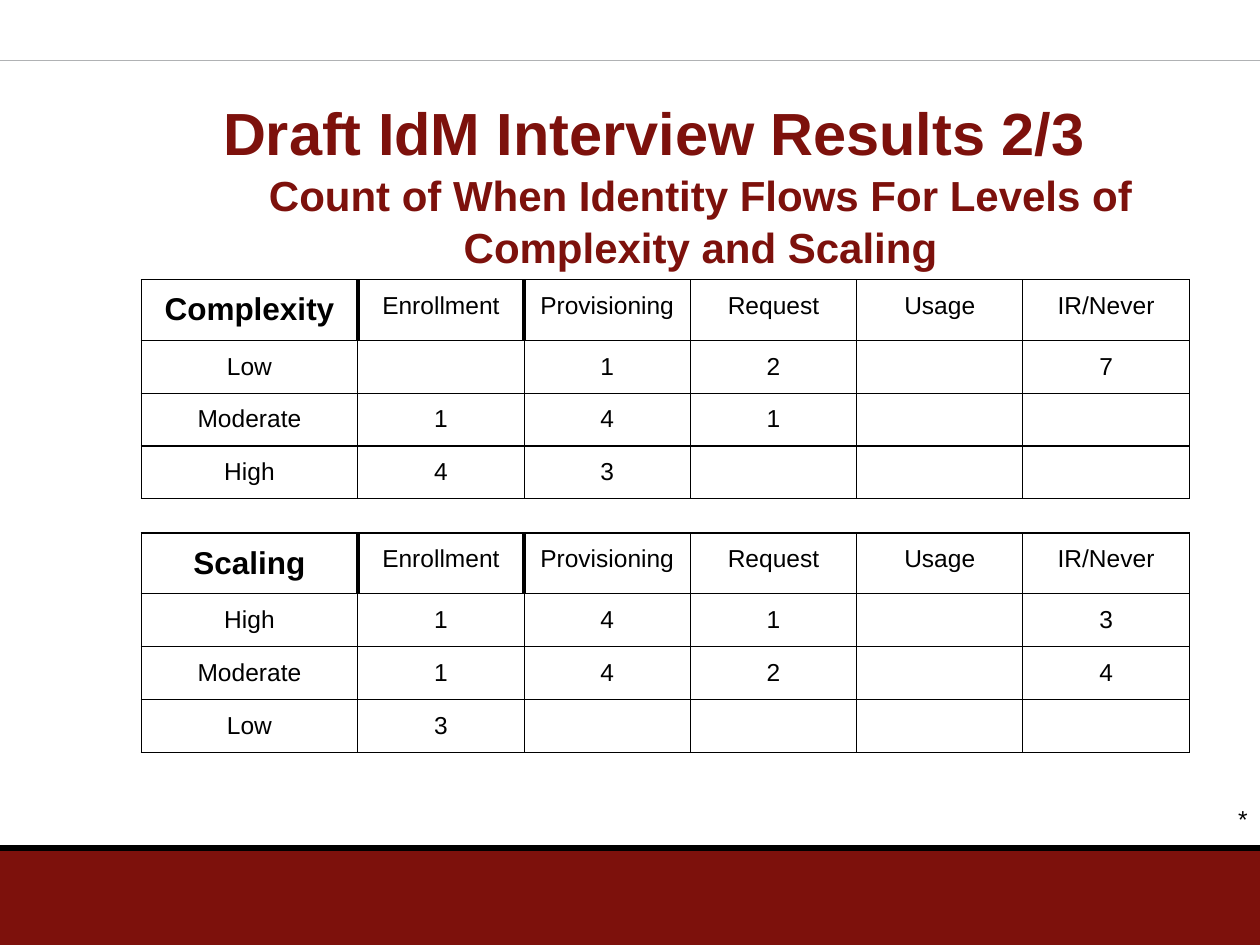
from dataclasses import dataclass

from lxml import etree
from pptx import Presentation
from pptx.dml.color import RGBColor
from pptx.enum.shapes import MSO_CONNECTOR, MSO_SHAPE
from pptx.enum.text import MSO_ANCHOR, MSO_AUTO_SIZE, PP_ALIGN
from pptx.oxml.ns import qn
from pptx.util import Inches, Pt

STRAIGHT = MSO_CONNECTOR.STRAIGHT
RECTANGLE = MSO_SHAPE.RECTANGLE
TOP = MSO_ANCHOR.TOP
NO_AUTOFIT = MSO_AUTO_SIZE.NONE
LEFT, CENTER, RIGHT = PP_ALIGN.LEFT, PP_ALIGN.CENTER, PP_ALIGN.RIGHT


@dataclass(frozen=True)
class Theme:
    font: str = "Arial"
    maroon: str = "7D110C"
    grey: str = "B0B2B4"
    black: str = "000000"
    white: str = "FFFFFF"
    title_size: float = 34
    subtitle_size: float = 24
    corner_size: float = 18
    body_size: float = 14
    thin: float = 0.75
    thick: float = 2.25
    band_rule: float = 3.75


THEME = Theme()
SLIDE_WIDTH, SLIDE_HEIGHT = 10, 7.5
TITLE_ONLY_LAYOUT = 5

# Table geometry
TABLE_LEFT = 1.12
COLUMN_WIDTHS = [1.72] + [1.32] * 5
ROW_HEIGHTS = [0.48] + [0.42] * 3
CELL_MARGIN = 0.1
THICK_HEADER_EDGES = (1, 2)

# Table content
FLOWS = ["Enrollment", "Provisioning", "Request", "Usage", "IR/Never"]
COMPLEXITY = [
    ["Complexity"] + FLOWS,
    ["Low", "", "1", "2", "", "7"],
    ["Moderate", "1", "4", "1", "", ""],
    ["High", "4", "3", "", "", ""],
]
SCALING = [
    ["Scaling"] + FLOWS,
    ["High", "1", "4", "1", "", "3"],
    ["Moderate", "1", "4", "2", "", "4"],
    ["Low", "3", "", "", "", ""],
]


def write_paragraph(paragraph, text, size, color, align, bold=False):
    paragraph.text = text
    paragraph.alignment = align
    font = paragraph.font
    font.name, font.size, font.bold = THEME.font, Pt(size), bold
    font.color.rgb = RGBColor.from_string(color)


def add_rule(slide, y, color, width):
    rule = slide.shapes.add_connector(
        STRAIGHT, 0, Inches(y), Inches(SLIDE_WIDTH), Inches(y))
    rule.line.color.rgb = RGBColor.from_string(color)
    rule.line.width = Pt(width)
    etree.SubElement(rule._element.spPr, qn("a:effectLst"))


def add_band(slide, top, height):
    band = slide.shapes.add_shape(
        RECTANGLE, 0, Inches(top), Inches(SLIDE_WIDTH), Inches(height))
    band.shadow.inherit = False
    band.fill.solid()
    band.fill.fore_color.rgb = RGBColor.from_string(THEME.maroon)
    band.line.fill.background()


def add_footer_mark(slide):
    mark = slide.shapes.add_textbox(
        Inches(9.43), Inches(6.33), Inches(0.57), Inches(0.34))
    mark.text_frame.word_wrap = True
    write_paragraph(mark.text_frame.paragraphs[0], "*",
                    THEME.body_size, THEME.black, RIGHT)


def fill_title(slide):
    title = slide.shapes.title
    title.left, title.top = Inches(1.67), Inches(0.61)
    title.width, title.height = Inches(7.78), Inches(1.52)
    frame = title.text_frame
    frame.word_wrap = True
    frame.auto_size = NO_AUTOFIT
    frame.vertical_anchor = TOP
    frame.margin_left = frame.margin_right = Inches(0.1)
    frame.margin_top, frame.margin_bottom = Inches(0.13), Inches(0)
    heading, subtitle = frame.paragraphs[0], frame.add_paragraph()
    write_paragraph(heading, "Draft IdM Interview Results 2/3",
                    THEME.title_size, THEME.maroon, LEFT, bold=True)
    write_paragraph(
        subtitle,
        "Count of When Identity Flows For Levels of Complexity and Scaling",
        THEME.subtitle_size, THEME.maroon, CENTER, bold=True)
    for paragraph in (heading, subtitle):
        paragraph.line_spacing = 1.04
        paragraph.space_before = Pt(0)


def set_borders(cell, row, column):
    properties = cell._tc.get_or_add_tcPr()
    thick_sides = set()
    if row == 0:
        if column + 1 in THICK_HEADER_EDGES:
            thick_sides.add("R")
        if column in THICK_HEADER_EDGES:
            thick_sides.add("L")
    for side in "LRTB":
        width = THEME.thick if side in thick_sides else THEME.thin
        border = etree.SubElement(properties, qn(f"a:ln{side}"), w=str(Pt(width)))
        fill = etree.SubElement(border, qn("a:solidFill"))
        etree.SubElement(fill, qn("a:srgbClr"), val=THEME.black)


def format_cell(cell, text, row, column):
    set_borders(cell, row, column)
    cell.fill.solid()
    cell.fill.fore_color.rgb = RGBColor.from_string(THEME.white)
    cell.vertical_anchor = TOP
    if not text:
        return
    cell.margin_left = cell.margin_right = cell.margin_top = Inches(CELL_MARGIN)
    is_corner = row == 0 and column == 0
    size = THEME.corner_size if is_corner else THEME.body_size
    write_paragraph(cell.text_frame.paragraphs[0], text, size,
                    THEME.black, CENTER, bold=is_corner)


def add_count_table(slide, top, rows):
    table = slide.shapes.add_table(
        len(rows), len(COLUMN_WIDTHS), Inches(TABLE_LEFT), Inches(top),
        Inches(sum(COLUMN_WIDTHS)), Inches(sum(ROW_HEIGHTS))).table
    table.first_row = table.horz_banding = False
    for column, width in zip(table.columns, COLUMN_WIDTHS):
        column.width = Inches(width)
    for row, height in zip(table.rows, ROW_HEIGHTS):
        row.height = Inches(height)
    for r, values in enumerate(rows):
        for c, text in enumerate(values):
            format_cell(table.cell(r, c), text, r, c)


def main():
    deck = Presentation()
    deck.slide_width, deck.slide_height = Inches(SLIDE_WIDTH), Inches(SLIDE_HEIGHT)
    slide = deck.slides.add_slide(deck.slide_layouts[TITLE_ONLY_LAYOUT])

    # Page frame
    add_band(slide, 6.75, 0.75)
    add_rule(slide, 0.48, THEME.grey, THEME.thin)
    add_rule(slide, 6.73, THEME.black, THEME.band_rule)
    add_footer_mark(slide)

    # Heading and result tables
    fill_title(slide)
    add_count_table(slide, 2.22, COMPLEXITY)
    add_count_table(slide, 4.23, SCALING)

    deck.save("out.pptx")


if __name__ == "__main__":
    main()
